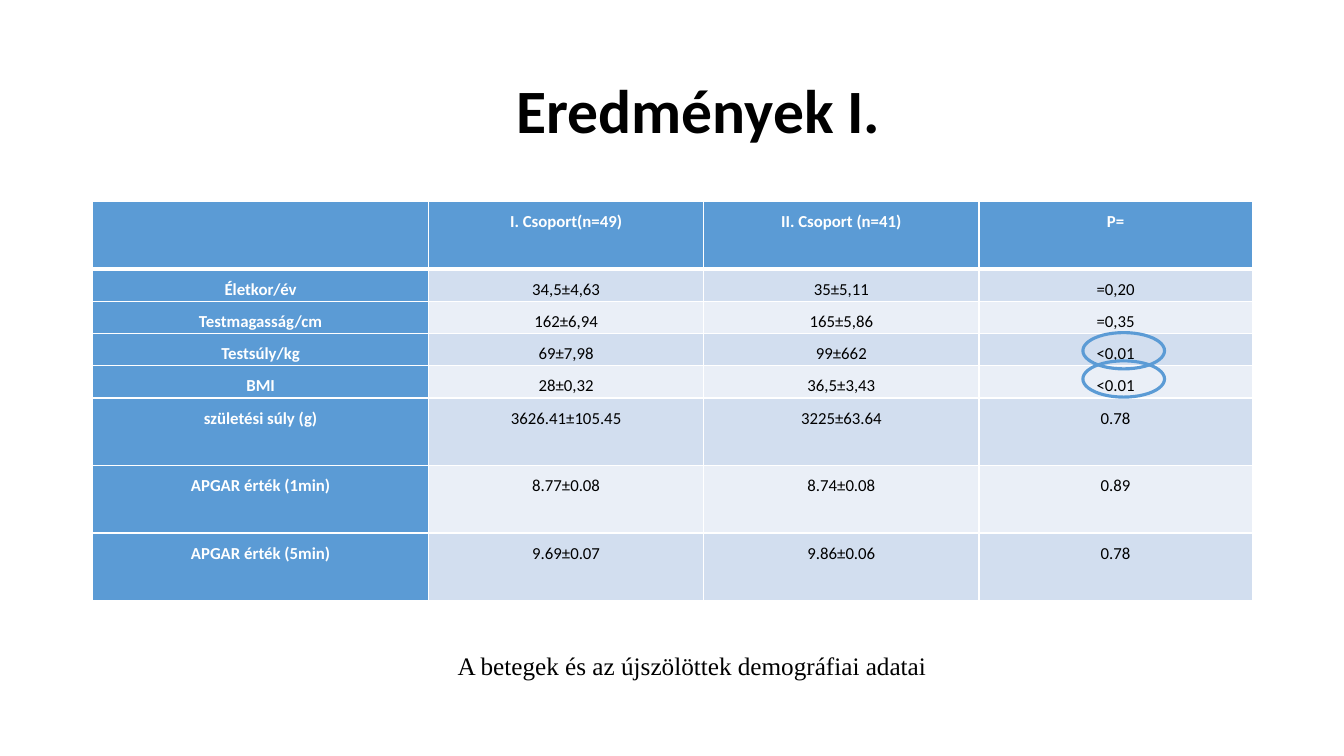
"""Build the slide with the demographic results table."""
from lxml.etree import SubElement
from pptx import Presentation
from pptx.dml.color import RGBColor
from pptx.enum.shapes import MSO_SHAPE
from pptx.enum.text import MSO_ANCHOR, MSO_AUTO_SIZE, PP_ALIGN
from pptx.oxml.ns import qn
from pptx.util import Inches, Pt

COLORS = {"blue": "5B9BD5", "dark": "D2DEEF", "light": "EAEFF7",
          "white": "FFFFFF", "black": "000000"}


def style(para, size, face, color, bold=False):
    font = para.font
    font.size, font.name, font.bold = Pt(size), face, bold
    font.color.rgb = RGBColor.from_string(COLORS[color])


def border(cell, side, width):
    line = SubElement(cell._tc.get_or_add_tcPr(), qn(f"a:ln{side}"), w=str(Pt(width)))
    fill = SubElement(line, qn("a:solidFill"))
    SubElement(fill, qn("a:srgbClr"), val=COLORS["white"])


deck = Presentation()
deck.slide_width, deck.slide_height = Inches(13.33), Inches(7.5)
slide = deck.slides.add_slide(deck.slide_layouts[6])
shapes = slide.shapes

title = shapes.add_textbox(Inches(0.92), Inches(0.4), Inches(11.5), Inches(1.45))
frame = title.text_frame
frame.word_wrap = True
frame.vertical_anchor = MSO_ANCHOR.MIDDLE
frame.margin_left = Inches(4.2)
para = frame.paragraphs[0]
para.text = "Eredmények I."
para.line_spacing = 0.9
style(para, 44, "Calibri", "black", True)

data = [
    ["", "I. Csoport(n=49)", "II. Csoport (n=41)", "P="],
    ["Életkor/év", "34,5±4,63", "35±5,11", "=0,20"],
    ["Testmagasság/cm", "162±6,94", "165±5,86", "=0,35"],
    ["Testsúly/kg", "69±7,98", "99±662", "<0,01"],
    ["BMI", "28±0,32", "36,5±3,43", "<0.01"],
    ["születési súly (g)", "3626.41±105.45", "3225±63.64", "0.78"],
    ["APGAR érték (1min)", "8.77±0.08", "8.74±0.08", "0.89"],
    ["APGAR érték (5min)", "9.69±0.07", "9.86±0.06", "0.78"],
]
widths = [3.33, 2.73, 2.73, 2.71]
heights = [0.67] + [0.32] * 4 + [0.67] * 3
table = shapes.add_table(len(data), len(widths), Inches(0.92), Inches(2),
                         Inches(11.5), Inches(3.96)).table
table.horz_banding = False
for col, width in zip(table.columns, widths):
    col.width = Inches(width)
for row, height in zip(table.rows, heights):
    row.height = Inches(height)

for r, texts in enumerate(data):
    for c, text in enumerate(texts):
        cell = table.cell(r, c)
        head = r == 0 or c == 0
        for side in "LRTB":
            thick = (r == 0 and side == "B") or (r == 1 and side == "T")
            border(cell, side, 3 if thick else 1)
        cell.fill.solid()
        shade = "blue" if head else "dark" if r % 2 else "light"
        cell.fill.fore_color.rgb = RGBColor.from_string(COLORS[shade])
        cell.margin_left = cell.margin_right = Inches(0.14)
        cell.margin_top = cell.margin_bottom = 0
        para = cell.text_frame.paragraphs[0]
        para.text = text
        para.alignment = PP_ALIGN.CENTER
        para.line_spacing = 1.5
        style(para, 12, "Calibri", "white" if head else "black", head)

for top in (3.58, 3.3):
    ring = shapes.add_shape(MSO_SHAPE.OVAL, Inches(10.74), Inches(top),
                            Inches(0.81), Inches(0.36))
    ring.shadow.inherit = False
    ring.fill.background()
    ring.line.color.rgb = RGBColor.from_string(COLORS["blue"])
    ring.line.width = Pt(2.25)

note = shapes.add_textbox(Inches(4.44), Inches(6.4), Inches(4.9), Inches(0.4))
frame = note.text_frame
frame.word_wrap = False
frame.auto_size = MSO_AUTO_SIZE.SHAPE_TO_FIT_TEXT
para = frame.paragraphs[0]
para.text = "A betegek és az újszölöttek demográfiai adatai"
style(para, 18, "Times New Roman", "black")

deck.save("out.pptx")
